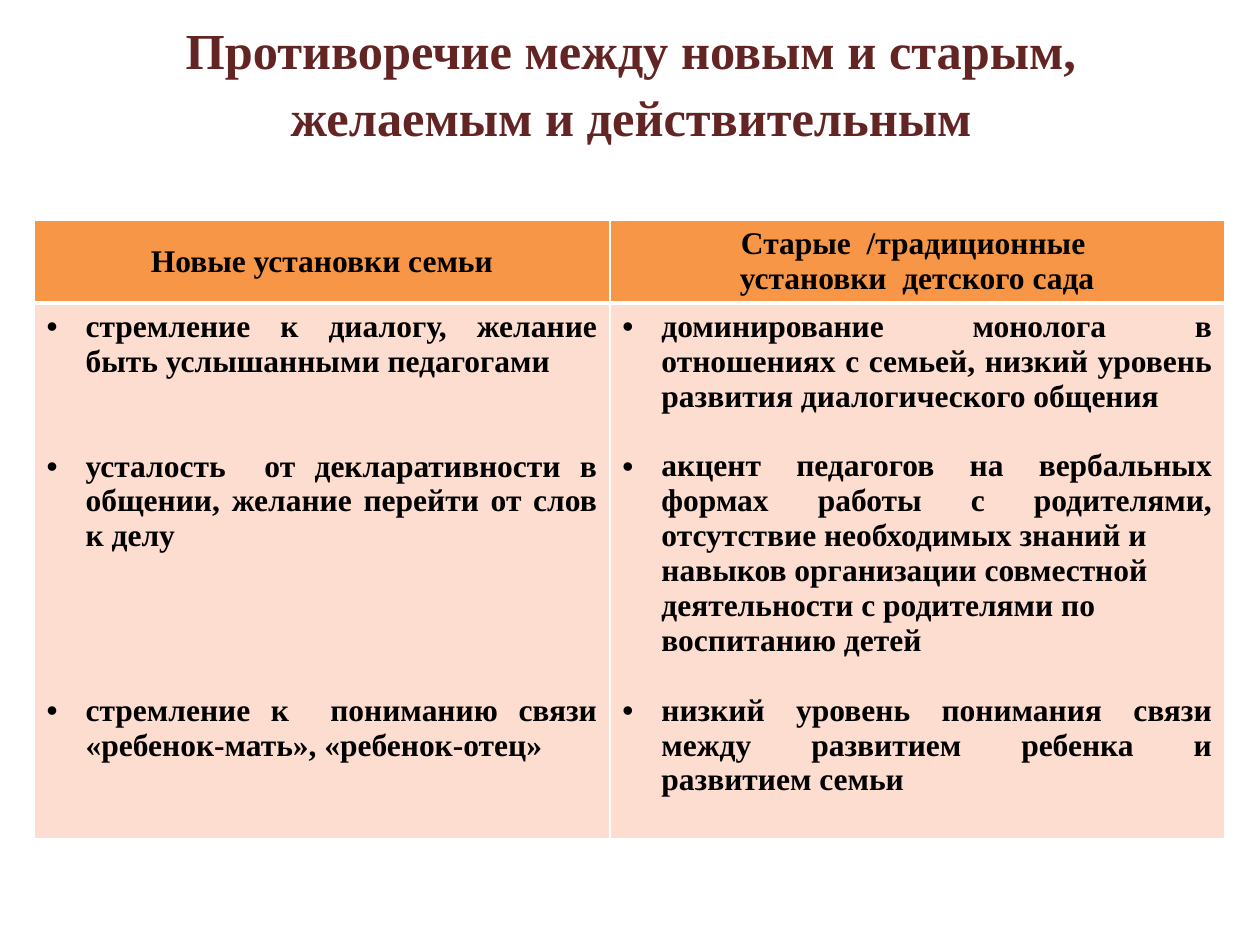
from lxml.etree import SubElement
from pptx import Presentation
from pptx.dml.color import RGBColor
from pptx.enum.text import MSO_ANCHOR, MSO_AUTO_SIZE, PP_ALIGN
from pptx.oxml.ns import qn
from pptx.util import Inches, Pt

FONT = "Times New Roman"
COLORS = {
    "title": "632523",
    "text": "000000",
    "header": "F79646",
    "body": "FCDDCF",
    "border": "FFFFFF",
}
TITLE = "Противоречие между новым и старым, желаемым и действительным"
HEADERS = [
    ["Новые установки семьи"],
    ["Старые  /традиционные ", "установки  детского сада"],
]
LINE = 20  # height in points of one line of table text

# Each item: empty lines above it, then its paragraphs; "\n" is a line break.
FAMILY_ITEMS = [
    (0, ["стремление к диалогу, желание быть услышанными педагогами"]),
    (2, ["усталость  от декларативности в общении, желание перейти от слов к делу"]),
    (4, ["стремление к  пониманию связи «ребенок-мать», «ребенок-отец»"]),
]
KINDERGARTEN_ITEMS = [
    (0, ["доминирование монолога в отношениях с семьей, низкий уровень "
         "развития диалогического общения"]),
    (1, ["акцент педагогов на вербальных формах работы с родителями,\n"
         "отсутствие необходимых знаний и",
         "навыков организации совместной",
         "деятельности с родителями по",
         "воспитанию детей"]),
    (1, ["низкий уровень понимания связи между развитием ребенка и развитием семьи"]),
]


def color(name):
    return RGBColor.from_string(COLORS[name])


def add_text(paragraph, text, size, color_name):
    for index, line in enumerate(text.split("\n")):
        if index:
            paragraph.add_line_break()
        run = paragraph.add_run()
        run.text = line
        run.font.name = FONT
        run.font.size = Pt(size)
        run.font.bold = True
        run.font.color.rgb = color(color_name)


def next_paragraph(text_frame, index):
    return text_frame.add_paragraph() if index else text_frame.paragraphs[0]


def indent(paragraph, bullet):
    """Set the item margin, with a hanging bullet if asked for."""
    properties = paragraph._p.get_or_add_pPr()
    properties.set("marL", str(Inches(0.31)))
    properties.set("indent", str(Inches(-0.31) if bullet else 0))
    if bullet:
        SubElement(properties, qn("a:buFont"), typeface="Arial")
        SubElement(properties, qn("a:buChar"), char="•")
    else:
        SubElement(properties, qn("a:buNone"))


def style_cell(cell, fill_name, bottom_width):
    properties = cell._tc.get_or_add_tcPr()
    widths = {"lnL": 1, "lnR": 1, "lnT": 1, "lnB": bottom_width}
    for side, width in widths.items():
        line = SubElement(properties, qn(f"a:{side}"), w=str(Pt(width)))
        fill = SubElement(line, qn("a:solidFill"))
        SubElement(fill, qn("a:srgbClr"), val=COLORS["border"])
    cell.fill.solid()
    cell.fill.fore_color.rgb = color(fill_name)


def fill_header(cell, lines):
    style_cell(cell, "header", 3)
    cell.vertical_anchor = MSO_ANCHOR.MIDDLE
    for index, line in enumerate(lines):
        paragraph = next_paragraph(cell.text_frame, index)
        paragraph.alignment = PP_ALIGN.CENTER
        add_text(paragraph, line, 18, "text")


def fill_items(cell, items):
    style_cell(cell, "body", 1)
    rows = [(gap if first == 0 else 0, first == 0, text)
            for gap, texts in items for first, text in enumerate(texts)]
    for index, (gap, bullet, text) in enumerate(rows):
        paragraph = next_paragraph(cell.text_frame, index)
        paragraph.alignment = PP_ALIGN.JUSTIFY
        if gap:
            paragraph.space_before = Pt(gap * LINE)
        indent(paragraph, bullet)
        add_text(paragraph, text, 18, "text")


def add_title(slide):
    title = slide.shapes.title
    title.left, title.top = Inches(0.51), Inches(0.21)
    title.width, title.height = Inches(9), Inches(0.85)
    frame = title.text_frame
    frame.word_wrap = True
    frame.auto_size = MSO_AUTO_SIZE.NONE
    frame.vertical_anchor = MSO_ANCHOR.MIDDLE
    paragraph = frame.paragraphs[0]
    paragraph.alignment = PP_ALIGN.CENTER
    paragraph.line_spacing = 1.1
    add_text(paragraph, TITLE, 28.8, "title")


def add_attitudes_table(slide):
    table = slide.shapes.add_table(
        2, 2, Inches(0.27), Inches(1.75), Inches(9.45), Inches(4.9)).table
    table.horz_banding = False
    for column, width in zip(table.columns, (4.57, 4.88)):
        column.width = Inches(width)
    for row, height in zip(table.rows, (0.65, 4.25)):
        row.height = Inches(height)
    for column, lines in enumerate(HEADERS):
        fill_header(table.cell(0, column), lines)
    for column, items in enumerate((FAMILY_ITEMS, KINDERGARTEN_ITEMS)):
        fill_items(table.cell(1, column), items)


def main():
    presentation = Presentation()
    presentation.slide_width = Inches(10)
    presentation.slide_height = Inches(7.5)
    slide = presentation.slides.add_slide(presentation.slide_layouts[5])
    add_title(slide)
    add_attitudes_table(slide)
    presentation.save("out.pptx")


if __name__ == "__main__":
    main()
